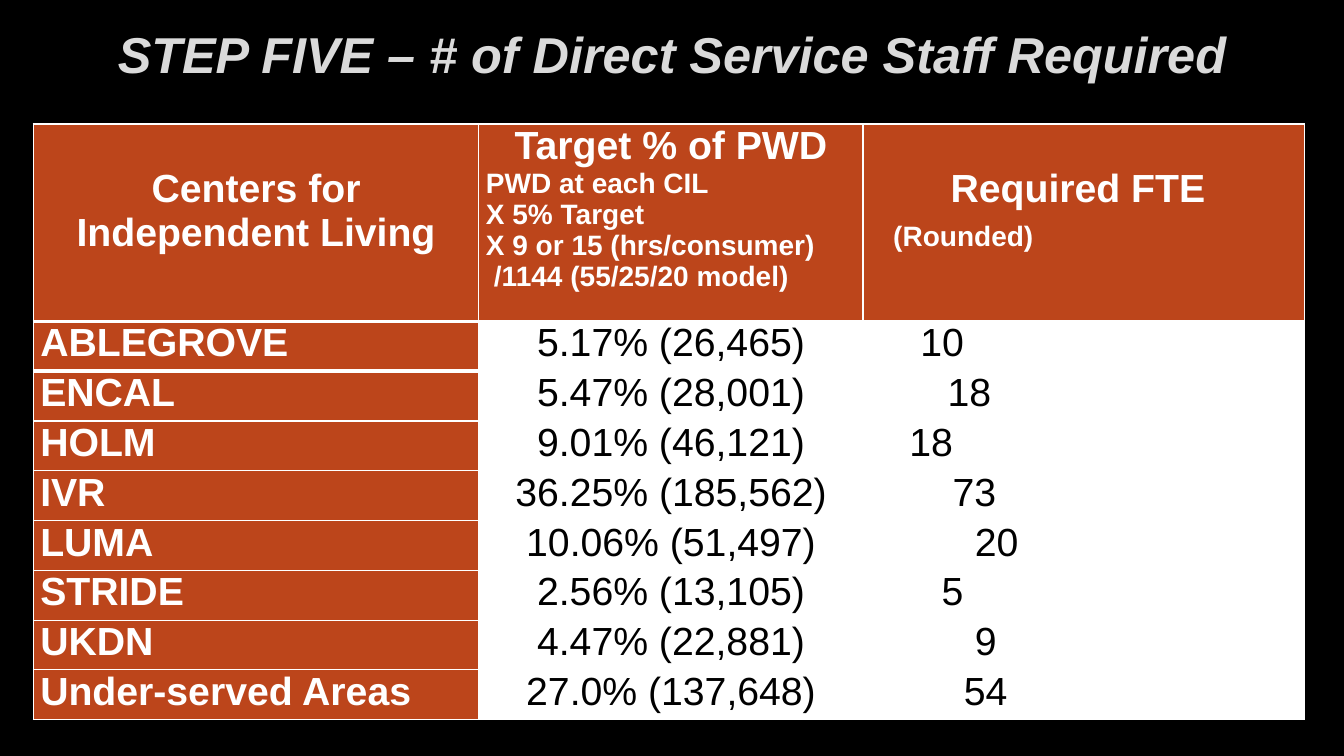
import lxml.etree
import pptx
import pptx.util
import pptx.dml.color
import pptx.enum.text
import pptx.oxml.ns

TITLE = "STEP FIVE – # of Direct Service Staff Required"
BLACK, WHITE, RUST, SILVER = "000000", "FFFFFF", "BC451B", "DADADA"
BIG, SMALL = 28, 20
CENTER = None
BLANK_LINE = 0.43

HEADERS = [
    (BLANK_LINE, [("Centers for", BIG, CENTER, 0), ("Independent Living", BIG, CENTER, 0)]),
    (0, [("Target % of PWD", BIG, CENTER, 0), ("PWD at each CIL", SMALL, 0, 0),
         ("X 5% Target", SMALL, 0, 0), ("X 9 or 15 (hrs/consumer)", SMALL, 0, 0),
         ("/1144 (55/25/20 model)", SMALL, 0.08, 0)]),
    (BLANK_LINE, [("Required FTE", BIG, 0.8, 0), ("(Rounded)", SMALL, 0.23, 7)]),
]
CENTERS = [
    ("ABLEGROVE", "5.17% (26,465)", "10", 0.5),
    ("ENCAL", "5.47% (28,001)", "18", 0.77),
    ("HOLM", "9.01% (46,121)", "18", 0.39),
    ("IVR", "36.25% (185,562)", "73", 0.82),
    ("LUMA", "10.06% (51,497)", "20", 1.04),
    ("STRIDE", "2.56% (13,105)", "5", 0.71),
    ("UKDN", "4.47% (22,881)", "9", 1.04),
    ("Under-served Areas", "27.0% (137,648)", "54", 0.93),
]
COLUMNS = [4.42, 3.81, 4.38]
TABLE_HEIGHT, HEADER_HEIGHT = 5.91, 1.96

inch = pptx.util.Inches
align = pptx.enum.text.PP_ALIGN


def color(value):
    return pptx.dml.color.RGBColor.from_string(value)


def style(p, size, ink, bold, indent=CENTER, italic=False):
    p.alignment = align.CENTER if indent is CENTER else align.LEFT
    if indent:
        p._p.get_or_add_pPr().set("marL", str(inch(indent)))
    f = p.font
    f.name, f.size, f.bold, f.italic = "Arial", pptx.util.Pt(size), bold, italic
    f.color.rgb = color(ink)


def fill_cell(cell, lines, fill, ink, bold, top=0):
    cell.fill.solid()
    cell.fill.fore_color.rgb = color(fill)
    cell.margin_left = cell.margin_right = inch(0.07)
    cell.margin_top, cell.margin_bottom = inch(top), 0
    tf = cell.text_frame
    tf.text = "\n".join(line[0] for line in lines)
    for p, (_, size, indent, before) in zip(tf.paragraphs, lines):
        style(p, size, ink, bold, indent)
        if before:
            p.space_before = pptx.util.Pt(before)


def rule_cell(cell, side, points):
    qn = pptx.oxml.ns.qn
    ln = lxml.etree.Element(qn("a:" + side), w=str(pptx.util.Pt(points)))
    fill = lxml.etree.SubElement(ln, qn("a:solidFill"))
    lxml.etree.SubElement(fill, qn("a:srgbClr"), val=WHITE)
    cell._tc.get_or_add_tcPr().insert(0, ln)


prs = pptx.Presentation()
prs.slide_width, prs.slide_height = inch(13.33), inch(7.5)
s = prs.slides.add_slide(prs.slide_layouts[6])
s.background.fill.solid()
s.background.fill.fore_color.rgb = color(BLACK)

tf = s.shapes.add_textbox(inch(1.01), 0, inch(11.32), inch(1.06)).text_frame
tf.word_wrap = True
tf.vertical_anchor = pptx.enum.text.MSO_ANCHOR.MIDDLE
tf.text = TITLE
style(tf.paragraphs[0], 36, SILVER, True, italic=True)

row_height = (TABLE_HEIGHT - HEADER_HEIGHT) / len(CENTERS)
table = s.shapes.add_table(len(CENTERS) + 1, len(COLUMNS), inch(0.33), inch(1.23),
                           inch(sum(COLUMNS)), inch(TABLE_HEIGHT)).table
table.first_col = True
for column, width in zip(table.columns, COLUMNS):
    column.width = inch(width)
for i, row in enumerate(table.rows):
    row.height = inch(row_height if i else HEADER_HEIGHT)

for c, (top, lines) in enumerate(HEADERS):
    fill_cell(table.cell(0, c), lines, RUST, WHITE, True, top)
    rule_cell(table.cell(0, c), "lnB", 3)
    rule_cell(table.cell(1, c), "lnT", 3)
for r, (name, target, staff, indent) in enumerate(CENTERS, 1):
    fill_cell(table.cell(r, 0), [(name, BIG, 0, 0)], RUST, WHITE, True)
    fill_cell(table.cell(r, 1), [(target, BIG, CENTER, 0)], WHITE, BLACK, False)
    fill_cell(table.cell(r, 2), [(staff, BIG, indent, 0)], WHITE, BLACK, False)

prs.save("out.pptx")
